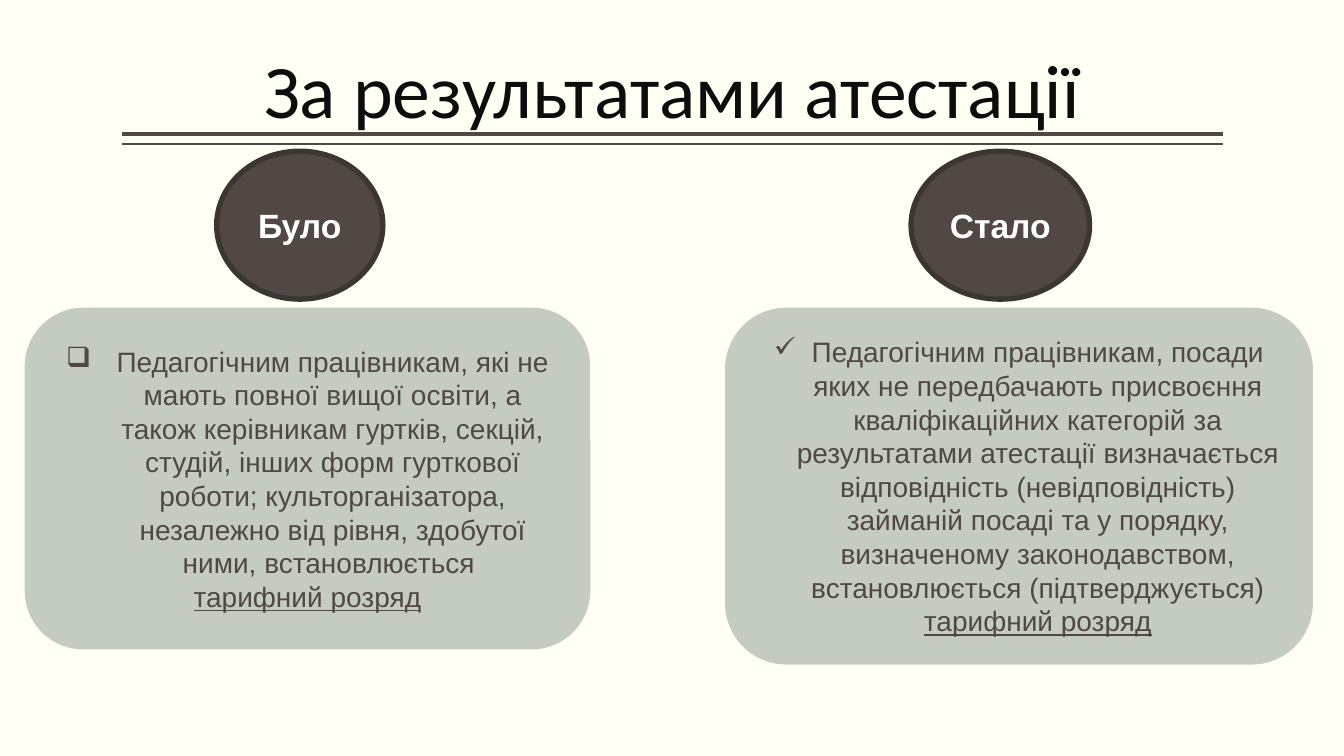
"""Build the slide that compares certification results before and after."""
from lxml.etree import SubElement
from pptx import Presentation
from pptx.dml.color import RGBColor
from pptx.enum.shapes import MSO_CONNECTOR, MSO_SHAPE
from pptx.enum.text import MSO_ANCHOR, PP_ALIGN
from pptx.oxml.ns import qn
from pptx.util import Cm, Pt

COLORS = {"paper": "FFFFF3", "brown": "514843", "edge": "3C3532",
          "sage": "C4CCC1", "title": "0D0D0D", "white": "FFFFFF"}
TITLE = {"name": "Calibri", "size": Pt(54)}
BADGE = {"name": "Arial", "size": Pt(24), "bold": True}
BODY = {"name": "Arial", "size": Pt(20)}
KEY = {**BODY, "underline": True}
TERM = "тарифний розряд"
BEFORE = ("Педагогічним працівникам, які не мають повної вищої освіти, а також "
          "керівникам гуртків, секцій, студій, інших форм гурткової роботи; "
          "культорганізатора, незалежно від рівня, здобутої ними, встановлюється ")
AFTER = ("Педагогічним працівникам, посади яких не передбачають присвоєння "
         "кваліфікаційних категорій за результатами атестації визначається "
         "відповідність (невідповідність) займаній посаді та у порядку, визначеному "
         "законодавством, встановлюється (підтверджується) ")


def rgb(name):
    return RGBColor.from_string(COLORS[name])


def add_run(p, text, formats, color):
    p.alignment = PP_ALIGN.CENTER
    r = p.add_run()
    r.text = text
    for key, value in formats.items():
        setattr(r.font, key, value)
    r.font.color.rgb = rgb(color)


def add_bullet(p, char, indent):
    pPr = p._p.get_or_add_pPr()
    pPr.set("marL", str(Cm(indent)))
    pPr.set("indent", str(-Cm(indent)))
    SubElement(pPr, qn("a:buChar")).set("char", char)


def add_panel(s, kind, box, fill, line):
    sp = s.shapes.add_shape(kind, *map(Cm, box))
    sp.shadow.inherit = False
    sp.fill.solid()
    sp.fill.fore_color.rgb = rgb(fill)
    sp.line.color.rgb = rgb(line)
    sp.line.width = Pt(3.78)
    tf = sp.text_frame
    tf.word_wrap = True
    tf.vertical_anchor = MSO_ANCHOR.MIDDLE
    return tf


def add_header(s, box, text):
    left, top, width, height = box
    for offset, weight in ((2.49, 3), (2.74, 1)):
        y = Cm(top + offset)
        line = s.shapes.add_connector(MSO_CONNECTOR.STRAIGHT, Cm(left + width), y, Cm(left), y)
        line.line.color.rgb = rgb("brown")
        line.line.width = Pt(weight)
        SubElement(line._element.spPr, qn("a:effectLst"))
    tf = s.shapes.add_textbox(*map(Cm, box)).text_frame
    tf.word_wrap = True
    tf.vertical_anchor = MSO_ANCHOR.BOTTOM
    tf.margin_left = tf.margin_right = 0
    p = tf.paragraphs[0]
    p.line_spacing = 0.9
    add_run(p, text, TITLE, "title")


def add_column(s, box, badge, badge_left, badge_width, text, bullet, indent, split):
    left, top, width, height = box
    badge_box = (left + badge_left, top - 4.01, badge_width, 3.73)
    tf = add_panel(s, MSO_SHAPE.OVAL, badge_box, "brown", "edge")
    add_run(tf.paragraphs[0], badge, BADGE, "white")

    tf = add_panel(s, MSO_SHAPE.ROUNDED_RECTANGLE, box, "sage", "sage")
    p = tf.paragraphs[0]
    add_bullet(p, bullet, indent)
    add_run(p, text, BODY, "brown")
    add_run(tf.add_paragraph() if split else p, TERM, KEY, "brown")


def main():
    prs = Presentation()
    prs.slide_width, prs.slide_height = Cm(33.87), Cm(19.05)
    s = prs.slides.add_slide(prs.slide_layouts[6])
    s.background.fill.solid()
    s.background.fill.fore_color.rgb = rgb("paper")
    add_header(s, (3.07, 0.89, 27.74, 2.64), "За результатами атестації")
    add_column(s, (0.69, 7.82, 14.12, 8.48), "Було", 4.77, 4.19, BEFORE, "❑", 1.27, True)
    add_column(s, (18.34, 7.82, 14.68, 8.86), "Стало", 4.62, 4.5, AFTER, "✓", 0.95, False)
    prs.save("out.pptx")


if __name__ == "__main__":
    main()
